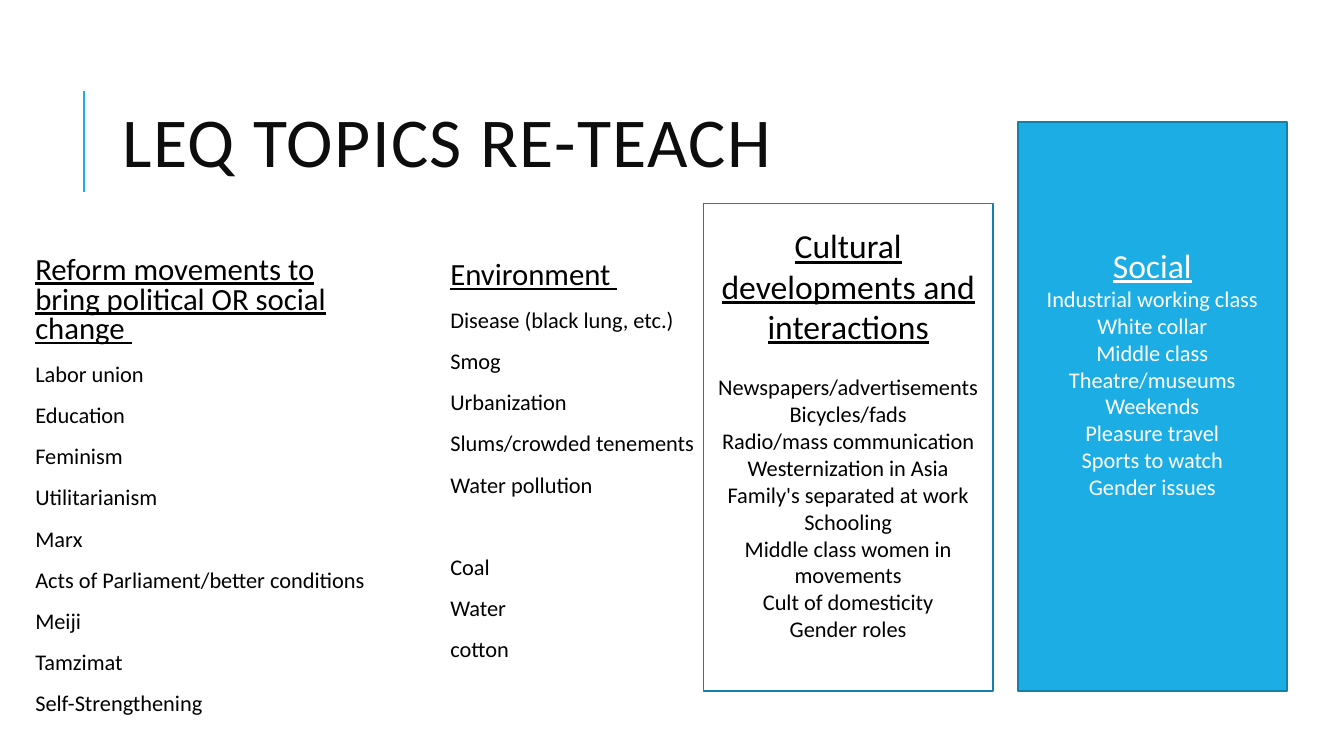
"""Build the LEQ topics re-teach slide: a title, two open lists and two boxed lists."""
import pptx
import pptx.dml.color
import pptx.enum.shapes
import pptx.enum.text
import pptx.oxml.ns
import pptx.util
from lxml import etree
from pptx.util import Cm, Pt

BLACK = pptx.dml.color.RGBColor(0x00, 0x00, 0x00)
NEAR_BLACK = pptx.dml.color.RGBColor(0x0D, 0x0D, 0x0D)
WHITE = pptx.dml.color.RGBColor(0xFF, 0xFF, 0xFF)
BLUE = pptx.dml.color.RGBColor(0x1C, 0xAD, 0xE4)
DARK_BLUE = pptx.dml.color.RGBColor(0x15, 0x80, 0xA9)
MIDDLE = pptx.enum.text.MSO_ANCHOR.MIDDLE
CENTER = pptx.enum.text.PP_ALIGN.CENTER


def add_run(paragraph, text, size, color, underline=False):
    run = paragraph.add_run()
    run.text = text
    run.font.name = "Calibri"
    run.font.size = Pt(size)
    run.font.color.rgb = color
    run.font.underline = underline
    return run


def add_list(text_frame, heading, heading_size, items, color):
    text_frame.word_wrap = True
    add_run(text_frame.paragraphs[0], heading, heading_size, color, underline=True)
    for item in items:
        add_run(text_frame.add_paragraph(), item, 16, color)


presentation = pptx.Presentation()
presentation.slide_width = Cm(33.87)
presentation.slide_height = Cm(19.05)
slide = presentation.slides.add_slide(presentation.slide_layouts[6])

title_rule = slide.shapes.add_connector(
    pptx.enum.shapes.MSO_CONNECTOR.STRAIGHT, Cm(2.11), Cm(4.83), Cm(2.11), Cm(2.29))
title_rule.line.color.rgb = BLUE
title_rule.line.width = Pt(1.5)
etree.SubElement(title_rule._element.spPr, pptx.oxml.ns.qn("a:effectLst"))

title = slide.shapes.add_textbox(Cm(2.84), Cm(1.63), Cm(27), Cm(4.17))
title.text_frame.word_wrap = True
title.text_frame.vertical_anchor = MIDDLE
title_paragraph = title.text_frame.paragraphs[0]
title_paragraph.line_spacing = 0.8
title_run = add_run(title_paragraph, "LEQ TOPICS RE-TEACH", 50, NEAR_BLACK)
title_run.font._element.set("spc", "100")

open_lists = [
    (0.51, 6.35, 9.17, "Reform movements to bring political OR social change ",
     ["Labor union", "Education", "Feminism", "Utilitarianism", "Marx",
      "Acts of Parliament/better conditions", "Meiji", "Tamzimat",
      "Self-Strengthening"]),
    (10.97, 6.48, 7.95, "Environment ",
     ["Disease (black lung, etc.)", "Smog", "Urbanization",
      "Slums/crowded tenements", "Water pollution", "Coal", "Water", "cotton"]),
]
for left, top, width, heading, items in open_lists:
    text_box = slide.shapes.add_textbox(Cm(left), Cm(top), Cm(width), Cm(11.18))
    text_frame = text_box.text_frame
    text_frame.margin_left = Cm(0.38)
    text_frame.margin_right = text_frame.margin_top = text_frame.margin_bottom = Cm(0.13)
    add_list(text_frame, heading, 22, items, BLACK)
    for paragraph in text_frame.paragraphs:
        paragraph.line_spacing = 0.8
        paragraph.space_before = Pt(41.5 if paragraph.text == "Coal" else 12)
        paragraph.space_after = Pt(2)

boxed_lists = [
    (17.73, 5.13, 7.29, 12.29, WHITE, BLACK, 19.5, 0.82,
     "Cultural developments and interactions",
     ["Newspapers/advertisements", "Bicycles/fads", "Radio/mass communication",
      "Westernization in Asia", "Family's separated at work", "Schooling",
      "Middle class women in movements", "Cult of domesticity", "Gender roles"]),
    (25.65, 3.07, 6.78, 14.35, BLUE, WHITE, 0, 1.85, "Social",
     ["Industrial working class", "White collar", "Middle class",
      "Theatre/museums", "Weekends", "Pleasure travel", "Sports to watch",
      "Gender issues"]),
]
for (left, top, width, height, fill_color, text_color, heading_gap, bottom_margin,
     heading, items) in boxed_lists:
    box = slide.shapes.add_shape(pptx.enum.shapes.MSO_SHAPE.RECTANGLE,
                                 Cm(left), Cm(top), Cm(width), Cm(height))
    box.shadow.inherit = False
    box.fill.solid()
    box.fill.fore_color.rgb = fill_color
    box.line.color.rgb = DARK_BLUE
    box.line.width = Pt(1.25)
    text_frame = box.text_frame
    text_frame.vertical_anchor = MIDDLE
    text_frame.margin_bottom = Cm(bottom_margin)
    add_list(text_frame, heading, 24, items, text_color)
    for paragraph in text_frame.paragraphs:
        paragraph.alignment = CENTER
    text_frame.paragraphs[0].space_after = Pt(heading_gap)

presentation.save("out.pptx")
